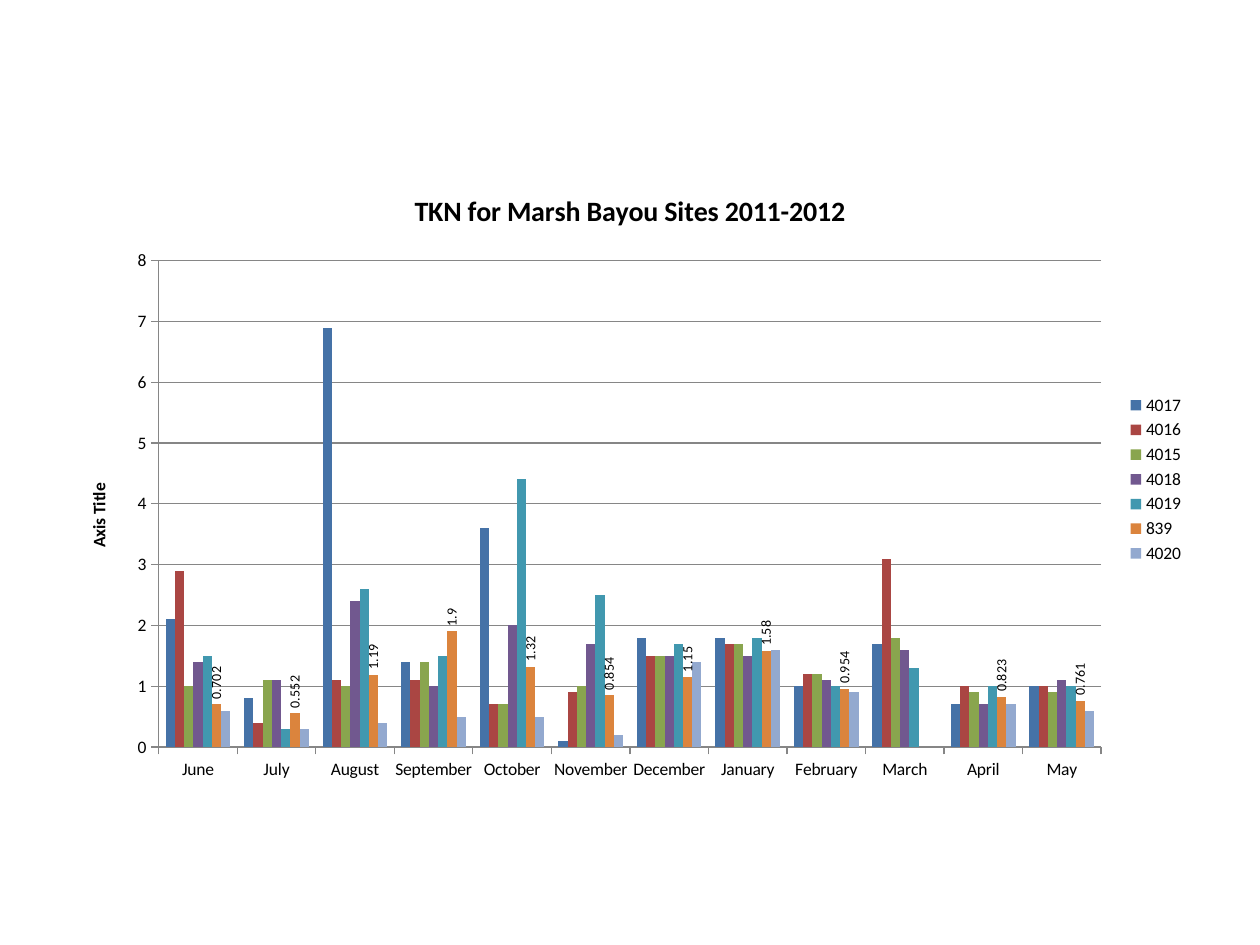
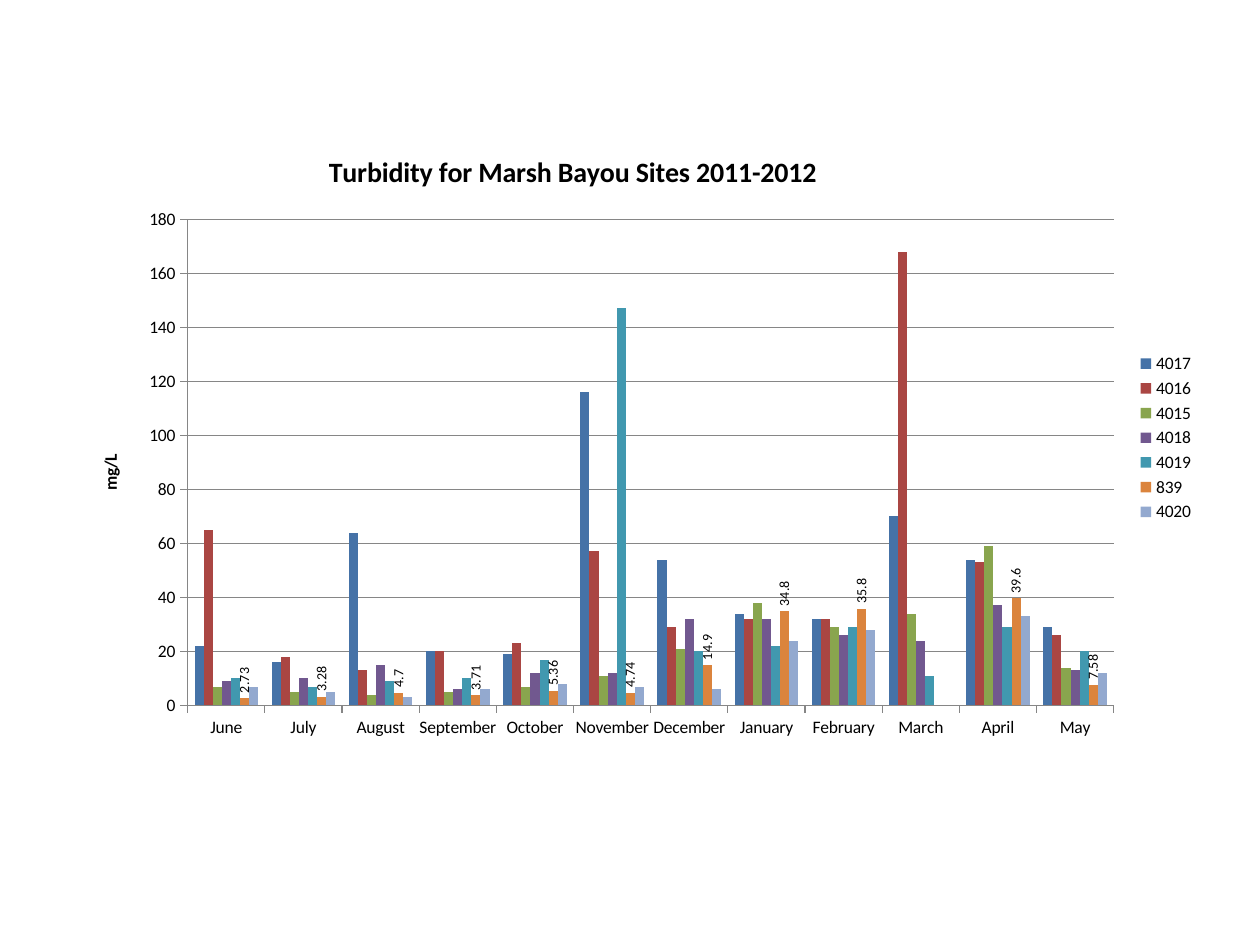
"""Build two slides of monthly water-quality column charts for the Marsh Bayou sites."""
from lxml import etree
from pptx import Presentation
from pptx.chart.data import CategoryChartData
from pptx.dml.color import RGBColor
from pptx.enum.chart import XL_CHART_TYPE, XL_LABEL_POSITION, XL_LEGEND_POSITION, XL_TICK_MARK
from pptx.oxml.ns import qn
from pptx.util import Inches, Pt

COLUMNS = XL_CHART_TYPE.COLUMN_CLUSTERED
OUTSIDE_END = XL_LABEL_POSITION.OUTSIDE_END
LEGEND_RIGHT = XL_LEGEND_POSITION.RIGHT
TICK_OUT, TICK_NONE = XL_TICK_MARK.OUTSIDE, XL_TICK_MARK.NONE

FONT = "Calibri"
BLACK = RGBColor(0x00, 0x00, 0x00)
GRAY = RGBColor(0x86, 0x86, 0x86)
SITE_COLORS = {
    "4017": RGBColor(0x45, 0x72, 0xA7),
    "4016": RGBColor(0xAA, 0x46, 0x43),
    "4015": RGBColor(0x89, 0xA5, 0x4E),
    "4018": RGBColor(0x71, 0x58, 0x8F),
    "4019": RGBColor(0x41, 0x98, 0xAF),
    "839": RGBColor(0xDB, 0x84, 0x3D),
    "4020": RGBColor(0x93, 0xA9, 0xCF),
}
LABELLED_SITE = "839"
MONTHS = ["June", "July", "August", "September", "October", "November",
          "December", "January", "February", "March", "April", "May"]
CHART_SIZE = (9, 4.95)

CHARTS = [
    {
        "title": "TKN for Marsh Bayou Sites 2011-2012",
        "axis_title": "Axis Title",
        "corner": (0.5, 1.33),
        "scale": (8, 1),
        "plot_area": (0.76, 0.74, 7.48, 3.86),
        "title_at": None,
        "axis_title_at": (0.17, 2.48),
        "values": {
            "4017": [2.1, 0.8, 6.9, 1.4, 3.6, 0.1, 1.8, 1.8, 1, 1.7, 0.7, 1],
            "4016": [2.9, 0.4, 1.1, 1.1, 0.7, 0.9, 1.5, 1.7, 1.2, 3.1, 1, 1],
            "4015": [1, 1.1, 1, 1.4, 0.7, 1, 1.5, 1.7, 1.2, 1.8, 0.9, 0.9],
            "4018": [1.4, 1.1, 2.4, 1, 2, 1.7, 1.5, 1.5, 1.1, 1.6, 0.7, 1.1],
            "4019": [1.5, 0.3, 2.6, 1.5, 4.4, 2.5, 1.7, 1.8, 1, 1.3, 1, 1],
            "839": [0.702, 0.552, 1.19, 1.9, 1.32, 0.854, 1.15, 1.58, 0.954, None, 0.823, 0.761],
            "4020": [0.6, 0.3, 0.4, 0.5, 0.5, 0.2, 1.4, 1.6, 0.9, None, 0.7, 0.6],
        },
    },
    {
        "title": "Turbidity for Marsh Bayou Sites 2011-2012",
        "axis_title": "mg/L",
        "corner": (0.58, 1),
        "scale": (180, 20),
        "plot_area": (0.91, 0.74, 7.35, 3.86),
        "title_at": (1.99, 0.17),
        "axis_title_at": (0.18, 2.58),
        "values": {
            "4017": [22, 16, 64, 20, 19, 116, 54, 34, 32, 70, 54, 29],
            "4016": [65, 18, 13, 20, 23, 57, 29, 32, 32, 168, 53, 26],
            "4015": [7, 5, 4, 5, 7, 11, 21, 38, 29, 34, 59, 14],
            "4018": [9, 10, 15, 6, 12, 12, 32, 32, 26, 24, 37, 13],
            "4019": [10, 7, 9, 10, 17, 147, 20, 22, 29, 11, 29, 20],
            "839": [2.73, 3.28, 4.7, 3.71, 5.36, 4.74, 14.9, 34.8, 35.8, None, 39.6, 7.58],
            "4020": [7, 5, 3, 6, 8, 7, 6, 24, 28, None, 33, 12],
        },
    },
]


def set_font(font, size, bold=False):
    font.name, font.size, font.bold = FONT, Pt(size), bold
    font.color.rgb = BLACK


def place(element, index, lengths, inner=False):
    """Set a manual layout from inches within the chart: left, top, width, height."""
    for old in element.findall(qn("c:layout")):
        element.remove(old)
    layout = etree.Element(qn("c:layout"))
    manual = etree.SubElement(layout, qn("c:manualLayout"))
    settings = [("layoutTarget", "inner")] if inner else []
    settings += [("xMode", "edge"), ("yMode", "edge")]
    settings += [(tag, length / side) for tag, length, side in zip("xywh", lengths, CHART_SIZE * 2)]
    for tag, value in settings:
        etree.SubElement(manual, qn(f"c:{tag}")).set("val", str(value))
    element.insert(index, layout)


def turn_upright(element):
    for body in element.iter(qn("a:bodyPr")):
        body.set("rot", "-5400000")
        body.set("vert", "horz")


def write_title(title, text, size, corner):
    span = title.text_frame.paragraphs[0].add_run()
    span.text = text
    set_font(span.font, size, bold=True)
    if corner:
        place(title.element, 1, corner)


def style_axes(chart, scale):
    value_axis = chart.value_axis
    value_axis.minimum_scale = 0
    value_axis.maximum_scale, value_axis.major_unit = scale
    value_axis.has_major_gridlines = True
    for axis in (chart.category_axis, value_axis):
        axis.major_tick_mark, axis.minor_tick_mark = TICK_OUT, TICK_NONE
        set_font(axis.tick_labels.font, 10)
    for line in (chart.category_axis.format.line, value_axis.format.line,
                 value_axis.major_gridlines.format.line):
        line.color.rgb = GRAY
        line.width = Pt(0.75)


def style_columns(plot):
    plot.gap_width, plot.overlap = 150, 0
    plot.vary_by_categories = False
    for series in plot.series:
        series.invert_if_negative = False
        series.format.fill.solid()
        series.format.fill.fore_color.rgb = SITE_COLORS[series.name]
        if series.name == LABELLED_SITE:
            labels = series.data_labels
            labels.show_value = True
            labels.position = OUTSIDE_END
            set_font(labels.font, 8)


def add_site_chart(page, content):
    data = CategoryChartData()
    data.categories = MONTHS
    for site, values in content["values"].items():
        data.add_series(site, values)
    frame = [Inches(length) for length in content["corner"] + CHART_SIZE]
    chart = page.shapes.add_chart(COLUMNS, *frame, data).chart
    set_font(chart.font, 10)
    chart.has_title = True
    write_title(chart.chart_title, content["title"], 16, content["title_at"])
    style_axes(chart, content["scale"])
    axis_title = chart.value_axis.axis_title
    write_title(axis_title, content["axis_title"], 10, content["axis_title_at"])
    turn_upright(axis_title.element)
    style_columns(chart.plots[0])
    for labels in chart.element.iter(qn("c:dLbls")):
        turn_upright(labels)
    chart.has_legend = True
    chart.legend.position = LEGEND_RIGHT
    chart.legend.include_in_layout = False
    set_font(chart.legend.font, 10)
    place(chart.element.find(".//" + qn("c:plotArea")), 0, content["plot_area"], inner=True)


def main():
    deck = Presentation()
    deck.slide_width, deck.slide_height = Inches(10), Inches(7.5)
    blank = deck.slide_layouts[6]
    for content in CHARTS:
        add_site_chart(deck.slides.add_slide(blank), content)
    deck.save("out.pptx")


if __name__ == "__main__":
    main()
